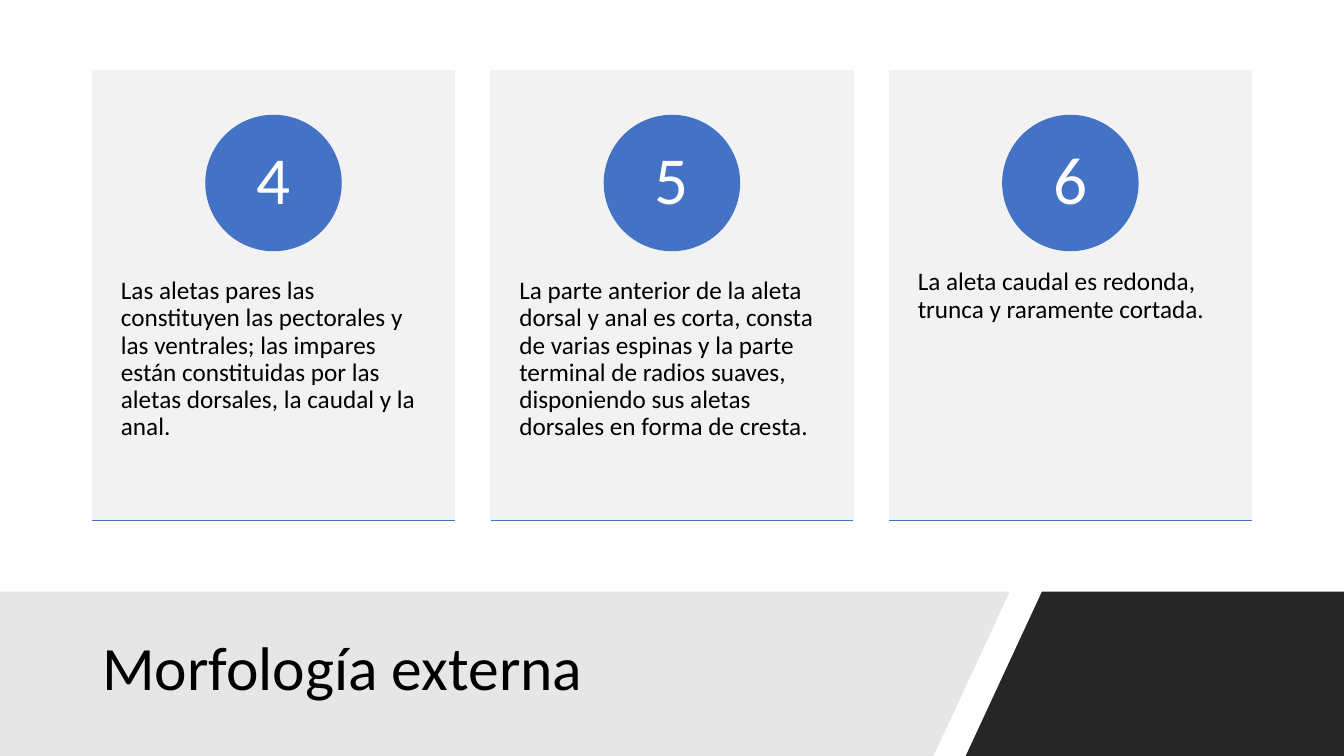
from dataclasses import dataclass

from lxml.etree import SubElement
from pptx import Presentation
from pptx.dml.color import RGBColor
from pptx.enum.shapes import MSO_CONNECTOR as Connector, MSO_SHAPE as Shape
from pptx.enum.text import MSO_ANCHOR as Anchor, PP_ALIGN as Align
from pptx.oxml.ns import qn
from pptx.shapes.autoshape import Shape as Box
from pptx.slide import Slide
from pptx.text.text import TextFrame
from pptx.util import Pt


@dataclass(frozen=True)
class Theme:
    font: str = "Calibri"
    ink: RGBColor = RGBColor(0x00, 0x00, 0x00)
    white: RGBColor = RGBColor(0xFF, 0xFF, 0xFF)
    accent: RGBColor = RGBColor(0x44, 0x72, 0xC4)
    card: RGBColor = RGBColor(0xF2, 0xF2, 0xF2)
    light_band: RGBColor = RGBColor(0xE7, 0xE6, 0xE6)
    dark_band: RGBColor = RGBColor(0x26, 0x26, 0x26)
    title_size: int = 44
    number_size: int = 48
    body_size: int = 18
    line_spacing: float = 0.9


@dataclass(frozen=True)
class Card:
    number: str
    text: str


THEME = Theme()
SLIDE_WIDTH, SLIDE_HEIGHT = 960, 540
BAND_TOP = 422.6
MARGIN = 66
CARD_TOP, CARD_WIDTH, CARD_HEIGHT, CARD_PITCH = 50.4, 258.8, 321.4, 284.6
CIRCLE_TOP, CIRCLE_SIZE = 82.5, 96.5
BODY_TOP, BODY_HEIGHT = 172.8, 193
BODY_INSET_X, BODY_INSET_Y = 20.4, 25.7

TITLE = "Morfología externa"
CARDS = [
    Card("4", "Las aletas pares las constituyen las pectorales y las ventrales; "
              "las impares están constituidas por las aletas dorsales, "
              "la caudal y la anal."),
    Card("5", "La parte anterior de la aleta dorsal y anal es corta, consta de "
              "varias espinas y la parte terminal de radios suaves, "
              "disponiendo sus aletas dorsales en forma de cresta."),
    Card("6", "La aleta caudal es redonda, trunca y raramente cortada."),
]


def write(frame: TextFrame, text: str, size: int, color: RGBColor,
          align: Align = Align.LEFT, anchor: Anchor = Anchor.TOP) -> None:
    frame.text = text
    frame.word_wrap = True
    frame.vertical_anchor = anchor
    para = frame.paragraphs[0]
    para.alignment = align
    para.line_spacing = THEME.line_spacing
    font = para.runs[0].font
    font.name, font.size, font.color.rgb = THEME.font, Pt(size), color


def set_insets(frame: TextFrame, x: float, y: float) -> None:
    frame.margin_left = frame.margin_right = Pt(x)
    frame.margin_top = frame.margin_bottom = Pt(y)


def paint(box: Box, color: RGBColor, outlined: bool) -> None:
    """Fill the box and, if outlined, edge it in the same colour."""
    box.shadow.inherit = False
    box.fill.solid()
    box.fill.fore_color.rgb = color
    if outlined:
        box.line.color.rgb = color
        box.line.width = Pt(1)
    else:
        box.line.fill.background()


def add_band(slide: Slide, corners: list[tuple[float, float]],
             color: RGBColor) -> None:
    points = [(Pt(x), Pt(y)) for x, y in corners]
    builder = slide.shapes.build_freeform(*points[0])
    builder.add_line_segments(points[1:], close=True)
    paint(builder.convert_to_shape(), color, outlined=False)


def add_title(slide: Slide) -> None:
    box = slide.shapes.add_textbox(Pt(MARGIN), Pt(435.6), Pt(607.7), Pt(86.4))
    write(box.text_frame, TITLE, THEME.title_size, THEME.ink,
          anchor=Anchor.MIDDLE)


def add_rule(slide: Slide, left: float, top: float, width: float) -> None:
    rule = slide.shapes.add_connector(
        Connector.STRAIGHT, Pt(left), Pt(top), Pt(left + width), Pt(top))
    rule.line.color.rgb = THEME.accent
    rule.line.width = Pt(1)
    SubElement(rule._element.spPr, qn("a:effectLst"))


def add_card(slide: Slide, card: Card, left: float) -> None:
    panel = slide.shapes.add_shape(
        Shape.RECTANGLE, Pt(left), Pt(CARD_TOP), Pt(CARD_WIDTH), Pt(CARD_HEIGHT))
    paint(panel, THEME.card, outlined=True)

    body = slide.shapes.add_textbox(
        Pt(left), Pt(BODY_TOP), Pt(CARD_WIDTH), Pt(BODY_HEIGHT))
    set_insets(body.text_frame, BODY_INSET_X, BODY_INSET_Y)
    write(body.text_frame, card.text, THEME.body_size, THEME.ink)

    circle = slide.shapes.add_shape(
        Shape.OVAL, Pt(left + (CARD_WIDTH - CIRCLE_SIZE) / 2), Pt(CIRCLE_TOP),
        Pt(CIRCLE_SIZE), Pt(CIRCLE_SIZE))
    paint(circle, THEME.accent, outlined=True)
    set_insets(circle.text_frame, 7.2, 0.7)
    write(circle.text_frame, card.number, THEME.number_size, THEME.white,
          Align.CENTER, Anchor.MIDDLE)

    add_rule(slide, left, CARD_TOP + CARD_HEIGHT, CARD_WIDTH)


def main() -> None:
    deck = Presentation()
    deck.slide_width, deck.slide_height = Pt(SLIDE_WIDTH), Pt(SLIDE_HEIGHT)
    slide = deck.slides.add_slide(deck.slide_layouts[6])

    add_band(slide, [(744.3, BAND_TOP), (SLIDE_WIDTH, BAND_TOP),
                     (SLIDE_WIDTH, SLIDE_HEIGHT), (689.8, SLIDE_HEIGHT)],
             THEME.dark_band)
    add_band(slide, [(0, BAND_TOP), (721.3, BAND_TOP),
                     (666.8, SLIDE_HEIGHT), (0, SLIDE_HEIGHT)],
             THEME.light_band)
    add_title(slide)
    for index, card in enumerate(CARDS):
        add_card(slide, card, MARGIN + index * CARD_PITCH)

    deck.save("out.pptx")


if __name__ == "__main__":
    main()
